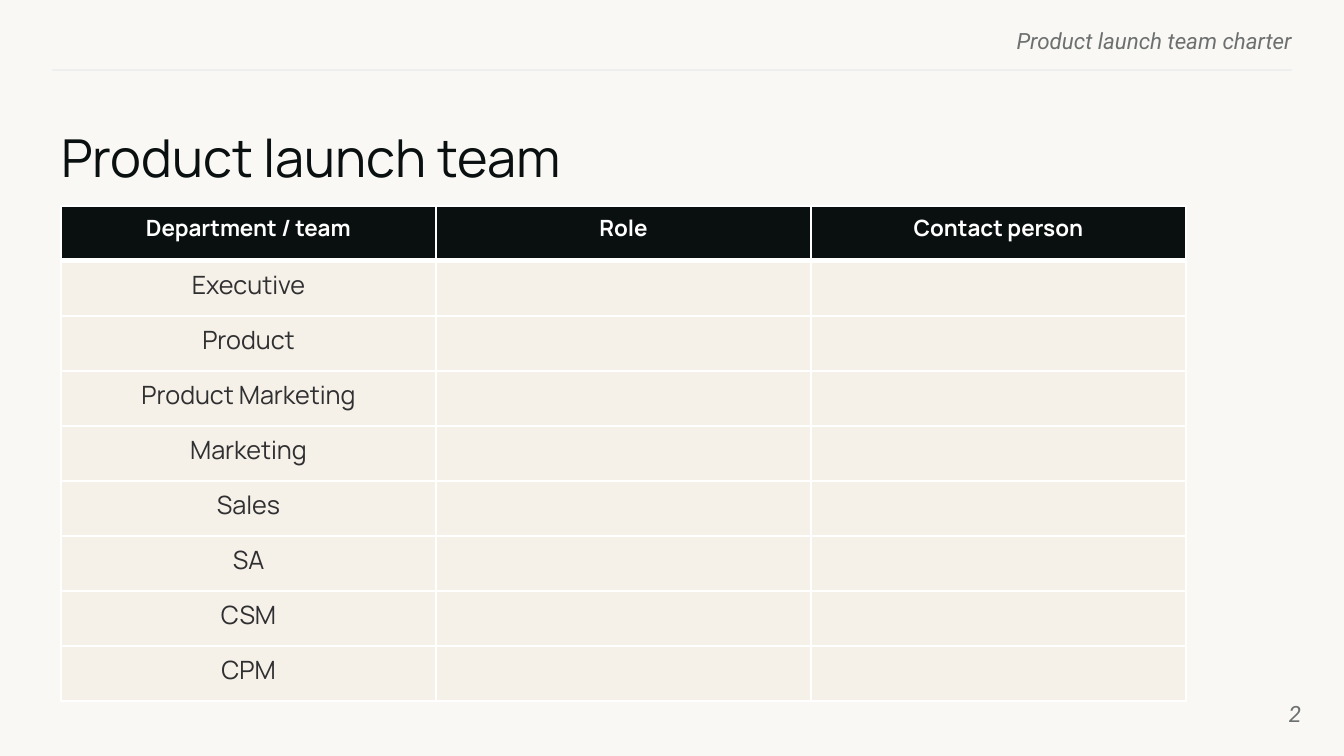
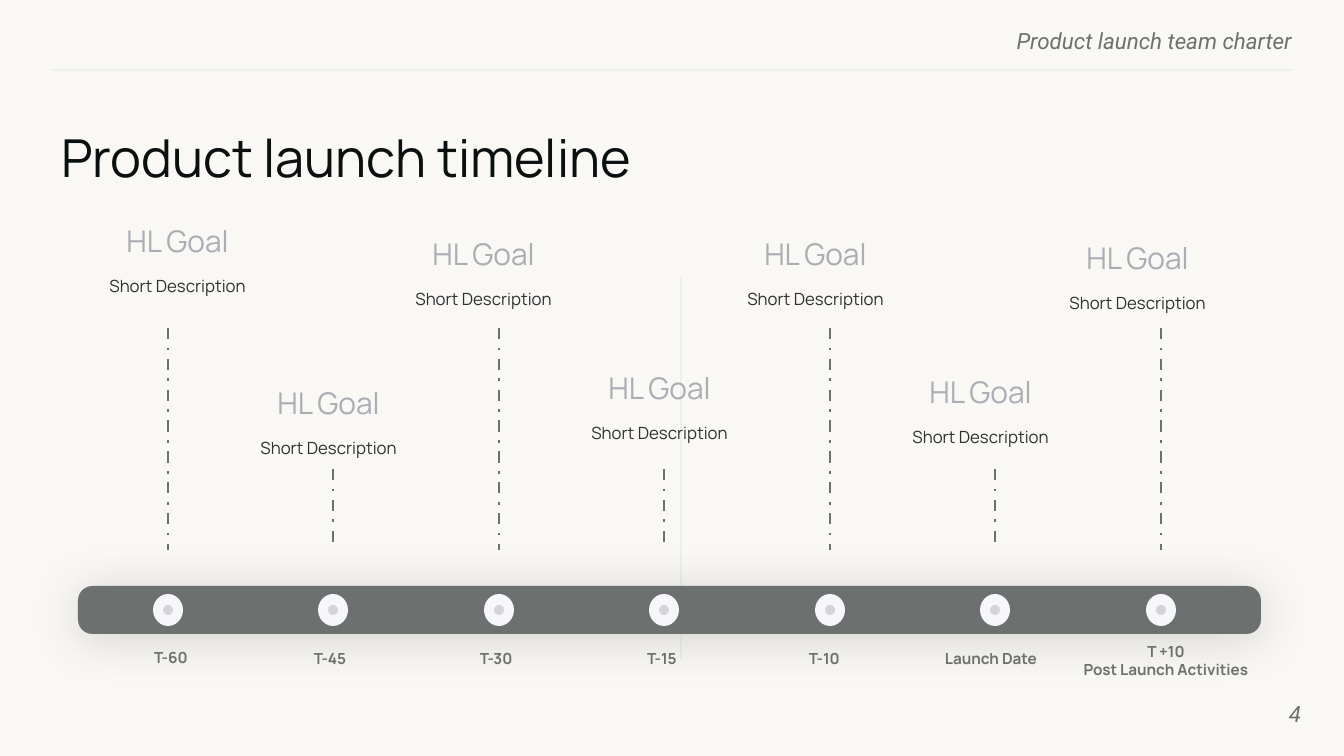
from dataclasses import dataclass

from lxml.etree import SubElement
from pptx import Presentation
from pptx.dml.color import RGBColor
from pptx.enum.dml import MSO_LINE
from pptx.enum.shapes import MSO_CONNECTOR, MSO_SHAPE
from pptx.enum.text import MSO_ANCHOR, MSO_AUTO_SIZE, PP_ALIGN
from pptx.oxml import parse_xml
from pptx.oxml.ns import nsdecls, qn
from pptx.util import Pt

SCALE = 9144000 / 1344
WIDTH, HEIGHT = 1344, 756
COLORS = {
    "paper": "F9F8F5",
    "rule": "EFEFEF",
    "ink": "09100F",
    "gray": "6C706F",
    "text": "302F31",
    "goal": "ADACB4",
    "cell": "F5F1E8",
    "white": "FFFFFF",
    "marker": "F6F6FB",
    "dot": "D2D4D8",
}
DISPLAY, CAPTION = "Manrope", "Roboto"
TITLE_BOX = (61, 122, 1241, 69)
HEADER_BOX = (52, 27, 1240, 43)
NUMBER_BOX = (1220, 685, 81, 58)
TABLE_BOX = (61, 206, 1125, 495)
TIMELINE_BOX = (78, 220, 1183, 480)

HEADINGS = ("Department / team", "Role", "Contact person")
DEPARTMENTS = ("Executive", "Product", "Product Marketing", "Marketing",
               "Sales", "SA", "CSM", "CPM")


@dataclass
class Milestone:
    """A goal and its date label, placed relative to the timeline box."""
    goal_left: int
    goal_top: int
    label: str
    label_left: int
    label_width: int
    label_top: int = 425
    label_height: int = 27


MILESTONES = (
    Milestone(-17, 0, "T-60", 73, 46, 424),
    Milestone(134, 162, "T-45", 233, 47),
    Milestone(289, 13, "T-30", 399, 47),
    Milestone(465, 147, "T-15", 566, 48),
    Milestone(621, 13, "T-10", 728, 48),
    Milestone(786, 151, "Launch Date", 864, 114),
    Milestone(943, 17, "T +10\vPost Launch Activities", 996, 184, 417, 47),
)


def px(*lengths):
    """Turn pixel lengths into EMU."""
    return [round(length * SCALE) for length in lengths]


def rgb(name):
    """Look up a named colour."""
    return RGBColor.from_string(COLORS[name])


def style_text(frame, size, color, font=DISPLAY, bold=False, italic=False,
               align=PP_ALIGN.LEFT):
    """Format every paragraph of a text frame alike."""
    for para in frame.paragraphs:
        para.alignment = align
        para.font.name = font
        para.font.size = Pt(size)
        para.font.bold = bold
        para.font.italic = italic
        para.font.color.rgb = rgb(color)


def set_frame(frame, inset=0, anchor=MSO_ANCHOR.TOP):
    """Set the margins, wrapping and anchor of a text frame."""
    margin = px(inset)[0]
    frame.margin_left = frame.margin_right = margin
    frame.margin_top = frame.margin_bottom = margin
    frame.word_wrap = True
    frame.auto_size = MSO_AUTO_SIZE.NONE
    frame.vertical_anchor = anchor


def add_text(page, box, text, size, color, inset=0, anchor=MSO_ANCHOR.TOP, **style):
    """Add a styled text box."""
    frame = page.shapes.add_textbox(*px(*box)).text_frame
    set_frame(frame, inset, anchor)
    frame.text = text
    style_text(frame, size, color, **style)


def add_line(page, start, end, color, width, dash=None):
    """Add a straight line without a shadow."""
    line = page.shapes.add_connector(MSO_CONNECTOR.STRAIGHT, *px(*start, *end))
    line.line.color.rgb = rgb(color)
    line.line.width = Pt(width)
    if dash:
        line.line.dash_style = dash
    SubElement(line._element.spPr, qn("a:effectLst"))


def add_filled(shapes, kind, box, color):
    """Add a plain filled shape without an outline."""
    shape = shapes.add_shape(kind, *px(*box))
    shape.shadow.inherit = False
    shape.fill.solid()
    shape.fill.fore_color.rgb = rgb(color)
    shape.line.fill.background()
    return shape


def add_header(page, box):
    """Add the running header above its rule."""
    left, top, width, height = box
    right, bottom = left + width, top + height
    add_line(page, (right, bottom), (left, bottom), "rule", 0.75)
    add_text(page, (right - 518, top, 518, 24), "Product launch team charter",
             12, "gray", font=CAPTION, italic=True, align=PP_ALIGN.RIGHT)


def add_page(deck, title, number):
    """Start a page with its title, header and page number."""
    page = deck.slides.add_slide(deck.slide_layouts.get_by_name("Title Only"))
    shape = page.shapes.title
    shape.left, shape.top, shape.width, shape.height = px(*TITLE_BOX)
    set_frame(shape.text_frame, anchor=MSO_ANCHOR.MIDDLE)
    shape.text_frame.text = title
    style_text(shape.text_frame, 28, "ink")
    add_header(page, HEADER_BOX)
    add_text(page, NUMBER_BOX, str(number), 12, "gray", anchor=MSO_ANCHOR.MIDDLE,
             font=CAPTION, italic=True, align=PP_ALIGN.RIGHT)
    return page


def set_borders(cell, top, bottom):
    """Give a cell white borders, with top and bottom widths in points."""
    properties = cell._tc.get_or_add_tcPr()
    widths = {"lnL": 1, "lnR": 1, "lnT": top, "lnB": bottom}
    for index, (side, width) in enumerate(widths.items()):
        properties.insert(index, parse_xml(
            f'<a:{side} {nsdecls("a")} w="{Pt(width)}"><a:solidFill>'
            f'<a:srgbClr val="{COLORS["white"]}"/></a:solidFill></a:{side}>'))


def add_team_table(page, box):
    """Add the table of departments, with equal rows and columns."""
    rows = [HEADINGS] + [(name, "", "") for name in DEPARTMENTS]
    table = page.shapes.add_table(len(rows), len(HEADINGS), *px(*box)).table
    table.horz_banding = False
    for column in table.columns:
        column.width = px(box[2] // len(HEADINGS))[0]
    for row_index, row in enumerate(rows):
        table.rows[row_index].height = px(box[3] // len(rows))[0]
        heading = row_index == 0
        for column_index, text in enumerate(row):
            cell = table.cell(row_index, column_index)
            cell.text = text
            cell.fill.solid()
            cell.fill.fore_color.rgb = rgb("ink" if heading else "cell")
            style_text(cell.text_frame, 12 if heading else 13.5,
                       "white" if heading else "text", bold=heading,
                       align=PP_ALIGN.CENTER)
            set_borders(cell, 3 if row_index == 1 else 1, 3 if heading else 1)


def add_bar(page, box):
    """Add the rounded timeline bar with its soft shadow."""
    bar = add_filled(page.shapes, MSO_SHAPE.ROUNDED_RECTANGLE, box, "gray")
    bar.adjustments[0] = 0.3
    effects = bar._element.spPr.find(qn("a:effectLst"))
    effects.append(parse_xml(
        f'<a:outerShdw {nsdecls("a")} blurRad="{Pt(27)}" dist="{Pt(2)}" '
        'dir="5400000" algn="t" rotWithShape="0"><a:srgbClr val="000000">'
        '<a:alpha val="15000"/></a:srgbClr></a:outerShdw>'))


def add_marker(page, center, top):
    """Add a grouped marker: a disc with a dot in it."""
    group = page.shapes.add_group_shape()
    add_filled(group.shapes, MSO_SHAPE.OVAL, (center - 15, top, 30, 32), "marker")
    add_filled(group.shapes, MSO_SHAPE.OVAL, (center - 5, top + 11, 10, 10), "dot")


def add_goal(page, left, top):
    """Add a goal heading and its description."""
    add_text(page, (left, top, 233, 47), "HL Goal", 16, "goal", inset=3,
             align=PP_ALIGN.CENTER)
    add_text(page, (left, top + 53, 233, 28), "Short Description", 9, "text",
             inset=3, align=PP_ALIGN.CENTER)


def add_timeline(page, box):
    """Add the bar, markers, stems, goals and date labels."""
    left, top, width, _ = box
    add_line(page, (681, top + 56), (681, top + 440), "rule", 0.75)
    add_bar(page, (left, top + 366, width, 48))
    for index, item in enumerate(MILESTONES):
        center = left + 90 + 331 * index // 2
        add_marker(page, center, top + 374)
        stem_top = top + (249 if index % 2 else 108)
        add_line(page, (center, stem_top), (center, top + 330), "gray", 1.5,
                 MSO_LINE.DASH_DOT)
        add_goal(page, left + item.goal_left, top + item.goal_top)
        label_box = (left + item.label_left, top + item.label_top,
                     item.label_width, item.label_height)
        add_text(page, label_box, item.label, 8.2, "gray", inset=3,
                 anchor=MSO_ANCHOR.MIDDLE, bold=True,
                 align=PP_ALIGN.CENTER if "\v" in item.label else PP_ALIGN.LEFT)


def main():
    """Build and save the deck."""
    deck = Presentation()
    deck.slide_width, deck.slide_height = px(WIDTH, HEIGHT)
    background = deck.slide_master.background.fill
    background.solid()
    background.fore_color.rgb = rgb("paper")
    add_team_table(add_page(deck, "Product launch team", 2), TABLE_BOX)
    add_timeline(add_page(deck, "Product launch timeline", 4), TIMELINE_BOX)
    deck.save("out.pptx")


if __name__ == "__main__":
    main()
